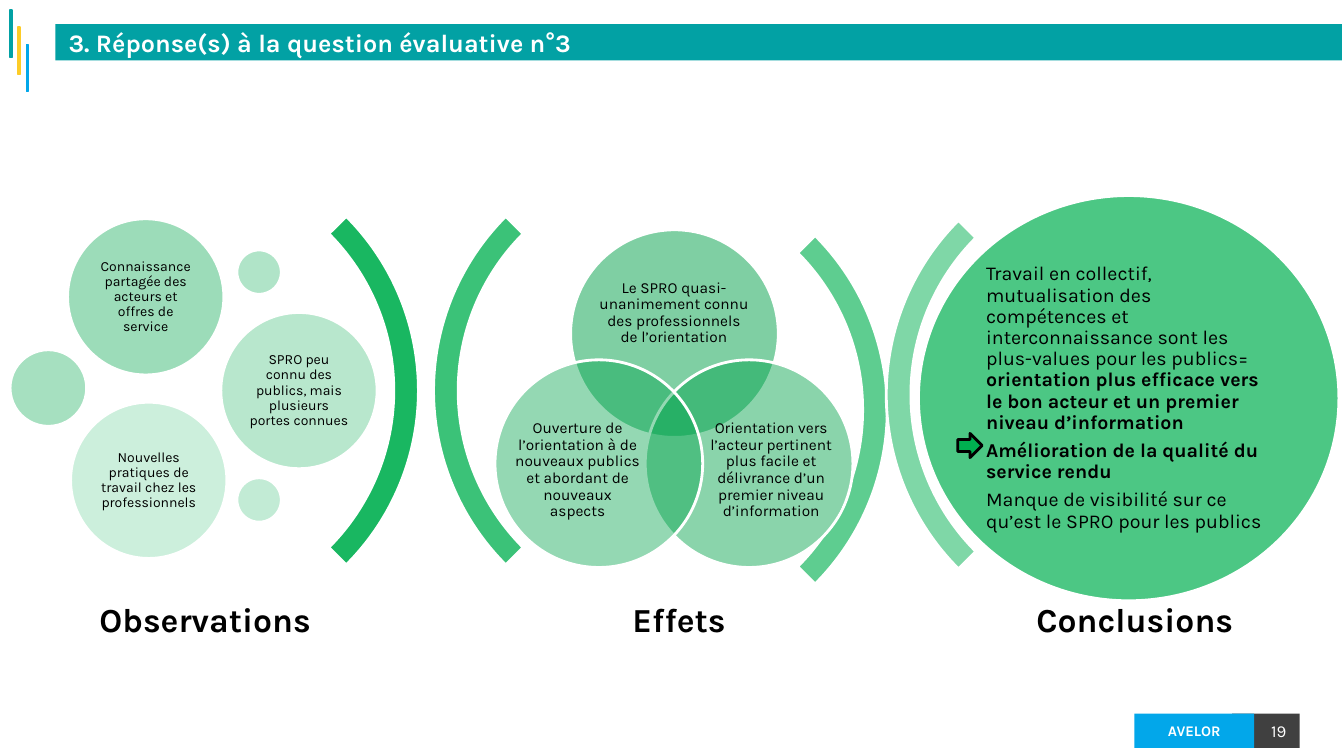
import pptx
import pptx.util
import pptx.dml.color
import pptx.enum.shapes
import pptx.enum.text
import pptx.oxml.ns
from lxml import etree

PX = 9144  # EMU per px, 100 px to the inch
MSO = pptx.enum.shapes.MSO_SHAPE
ALIGN = pptx.enum.text.PP_ALIGN
ANCHOR = pptx.enum.text.MSO_ANCHOR
THEME = {
    "font": "Karla",
    "white": "FFFFFF", "black": "000000", "dark": "404040",
    "teal": "02A1A4", "yellow": "FDCC27", "blue": "02A7EA", "green": "00B050",
    "title": 18, "stage": 24, "conclusion": 14, "effect": 11, "observation": 10,
    "brand": 10.5, "page": 12,
}

prs = pptx.Presentation()
prs.slide_width, prs.slide_height = 1333 * PX, 750 * PX
s = prs.slides.add_slide(prs.slide_layouts[6])


def add_shape(kind, box, fill, alpha=100, line=None, width=2):
    """Draw a preset shape; box is in px, alpha is opacity in percent."""
    sp = s.shapes.add_shape(kind, *[v * PX for v in box])
    sp.shadow.inherit = False
    sp.fill.solid()
    sp.fill.fore_color.rgb = pptx.dml.color.RGBColor.from_string(fill)
    if alpha < 100:
        color = sp.fill._xPr.find(".//" + pptx.oxml.ns.qn("a:srgbClr"))
        etree.SubElement(color, pptx.oxml.ns.qn("a:alpha"), val=str(alpha * 1000))
    if line:
        sp.line.color.rgb = pptx.dml.color.RGBColor.from_string(line)
        sp.line.width = pptx.util.Pt(width)
    else:
        sp.line.fill.background()
    return sp


def add_text(sp, paragraphs, size, color=THEME["black"], align=ALIGN.CENTER,
             insets=(0, 0), spacing=0.9, before=0, after=0, anchor=ANCHOR.MIDDLE):
    """Fill a shape with paragraphs, each a list of (text, bold) runs."""
    tf = sp.text_frame
    tf.word_wrap = True
    tf.vertical_anchor = anchor
    tf.margin_left = tf.margin_right = insets[0] * PX
    tf.margin_top = tf.margin_bottom = insets[1] * PX
    for i, runs in enumerate(paragraphs):
        p = tf.add_paragraph() if i else tf.paragraphs[0]
        p.alignment = align
        p.line_spacing = spacing
        p.space_before = pptx.util.Pt(before)
        p.space_after = pptx.util.Pt(after)
        for text, bold in runs:
            r = p.add_run()
            r.text = text
            r.font.name = THEME["font"]
            r.font.size = pptx.util.Pt(size)
            r.font.bold = bold
            r.font.color.rgb = pptx.dml.color.RGBColor.from_string(color)


# Footer, corner bars and title band
page = add_shape(MSO.RECTANGLE, (1222, 708, 67, 34), THEME["dark"])
add_text(page, [[("19", False)]], THEME["page"], THEME["white"], ALIGN.RIGHT,
         (13, 7), 1, anchor=ANCHOR.TOP)
brand = add_shape(MSO.RECTANGLE, (1125, 708, 119, 34), THEME["blue"])
add_text(brand, [[("AVELOR", True)]], THEME["brand"], THEME["white"],
         insets=(13, 7), spacing=1, before=2)
for i, name in enumerate(("teal", "yellow", "blue")):
    add_shape(MSO.RECTANGLE, (10 + 8 * i, 10 + 17 * i, 2, 47), THEME[name], 75,
              THEME[name], 1)
title = add_shape(MSO.RECTANGLE, (55, 24, 1276, 36), THEME["teal"])
add_text(title, [[("3. Réponse(s) à la question évaluative n°3", True)]],
         THEME["title"], THEME["white"], ALIGN.LEFT, (13, 7), 1, before=4)

# Brackets between the stages
for left, top, rotation, alpha in ((-74, 143, 90, 90), (430, 143, 270, 77),
                                   (391, 162, 90, 63), (879, 147, 270, 50)):
    arc = add_shape(MSO.BLOCK_ARC, (left, top, 489, 489), THEME["green"], alpha,
                    THEME["white"])
    arc.rotation = rotation
    for i, value in enumerate((135, 189, 0.05)):
        arc.adjustments[i] = value

# Stage names
for left, stage in ((18, "Observations"), (488, "Effets"), (940, "Conclusions")):
    label = s.shapes.add_textbox(*[v * PX for v in (left, 568, 371, 98)])
    add_text(label, [[(stage, True)]], THEME["stage"], insets=(10, 10))

# Effects: three overlapping circles, each with its own text area
effects = (
    (566, 228, "00A049", 50, (593, 264, 151, 93),
     "Le SPRO quasi-unanimement connu des professionnels de l’orientation"),
    (640, 357, "00A24A", 46, (703, 410, 124, 113),
     "Orientation vers l’acteur pertinent plus facile et délivrance d’un "
     "premier niveau d’information"),
    (491, 357, "00A44B", 42, (511, 410, 124, 113),
     "Ouverture de l’orientation à de nouveaux publics et abordant de "
     "nouveaux aspects"),
)
for left, top, fill, alpha, area, text in effects:
    add_shape(MSO.OVAL, (left, top, 206, 206), fill, alpha, THEME["white"])
    tb = s.shapes.add_textbox(*[v * PX for v in area])
    add_text(tb, [[(text, False)]], THEME["effect"])

# Observations: bubbles, the small ones empty
bubbles = (
    (67, 217, 155, "00A64C", 39,
     "Connaissance partagée des acteurs et offres de service"),
    (10, 347, 76, "00A84D", 35, None),
    (235, 248, 44, "00AA4E", 31, None),
    (219, 310, 155, "00AC4F", 28,
     "SPRO peu connu des publics, mais plusieurs portes connues"),
    (235, 474, 44, "00AE50", 24, None),
    (70, 399, 155, "00B151", 20,
     "Nouvelles pratiques de travail chez les professionnels"),
)
for left, top, size, fill, alpha, text in bubbles:
    bubble = add_shape(MSO.OVAL, (left, top, size, size), fill, alpha, THEME["white"])
    if text:
        add_text(bubble, [[(text, False)]], THEME["observation"], insets=(4, 4))

# Conclusions
conclusion = add_shape(MSO.OVAL, (911, 194, 417, 402), THEME["green"], 70,
                       THEME["white"])
add_text(conclusion, [
    [("Travail en collectif, mutualisation des compétences et interconnaissance "
      "sont les plus-values pour les publics= ", False),
     ("orientation plus efficace vers le bon acteur et un premier niveau "
      "d’information", True)],
    [("Amélioration de la qualité du service rendu", True)],
    [("Manque de visibilité sur ce qu’est le SPRO pour les publics", False)],
], THEME["conclusion"], align=ALIGN.LEFT, insets=(6, 6), after=5)
add_shape(MSO.RIGHT_ARROW, (950, 430, 24, 24), THEME["green"], line=THEME["black"])

prs.save("out.pptx")
